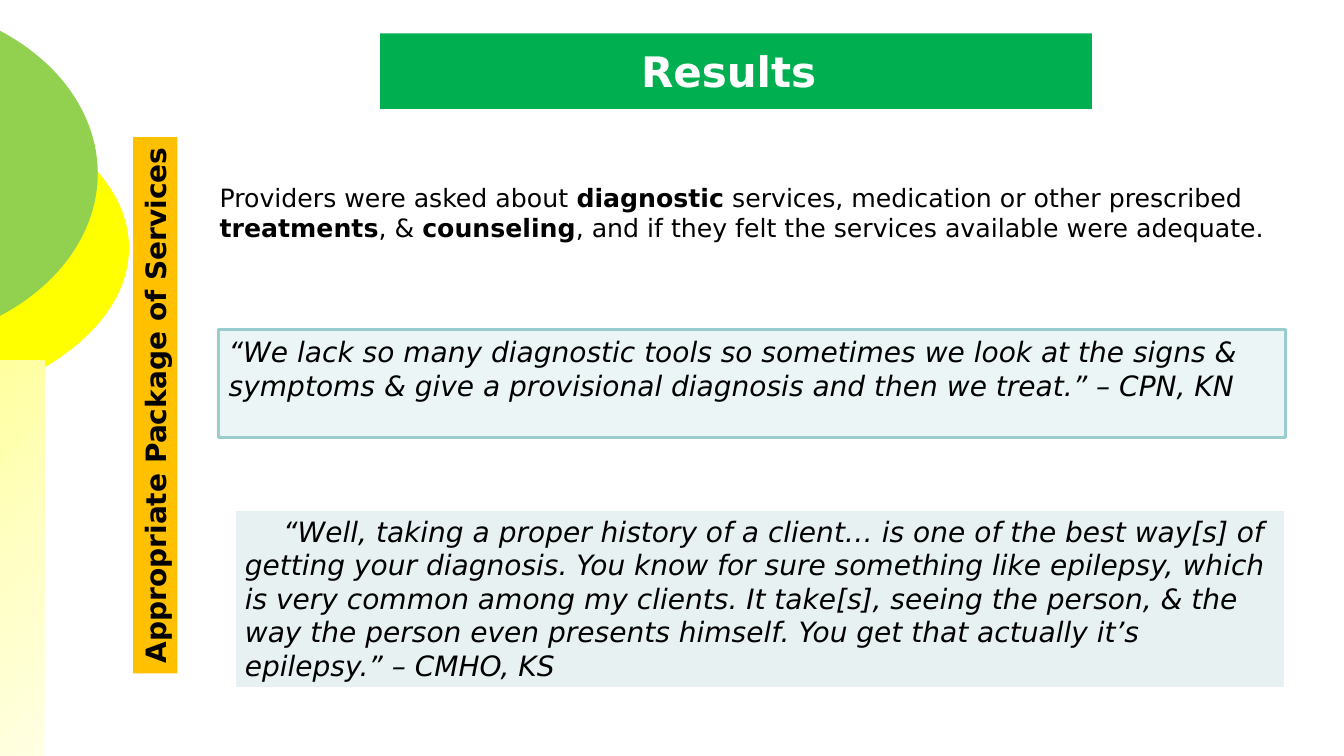
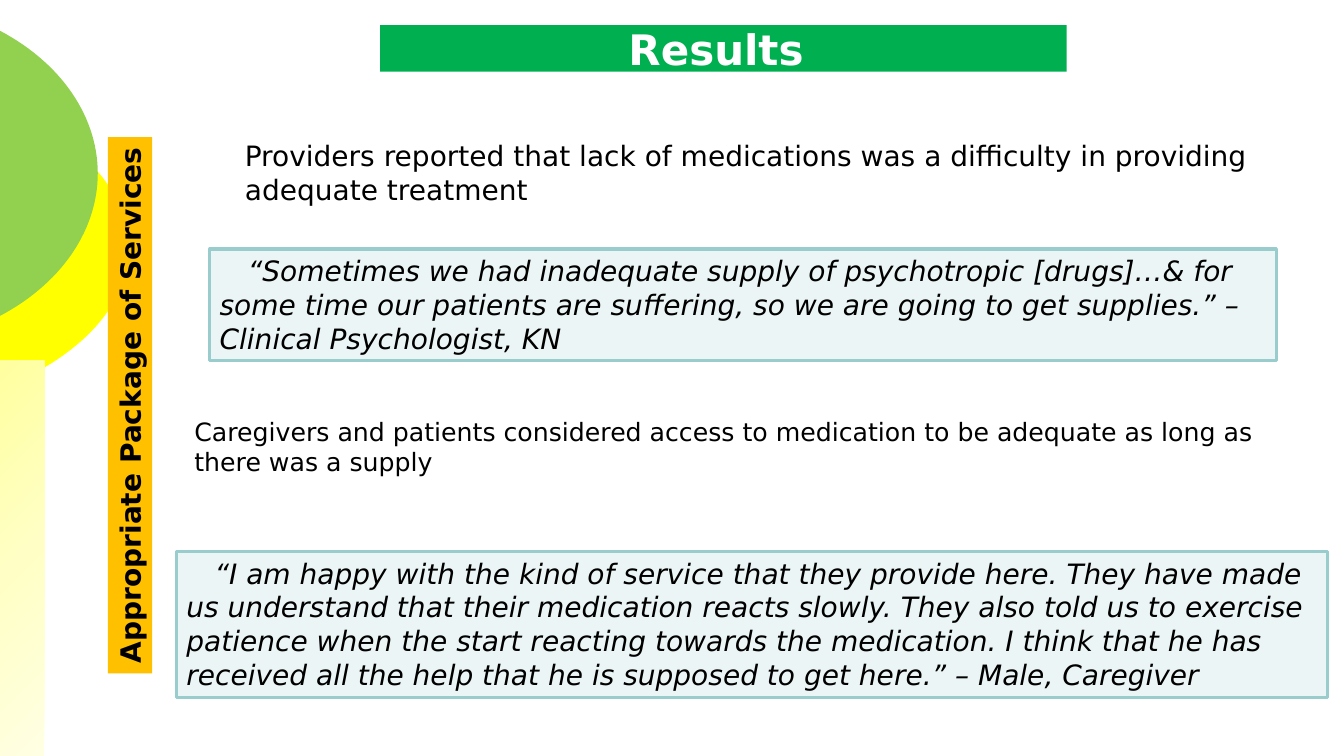
import math

import pptx
import pptx.dml.color
import pptx.enum.shapes
import pptx.enum.text
import pptx.oxml
import pptx.oxml.ns
import pptx.util
from pptx.util import Inches

KIND = pptx.enum.shapes.MSO_SHAPE
ALIGN = pptx.enum.text.PP_ALIGN
ANCHOR = pptx.enum.text.MSO_ANCHOR
FIT = pptx.enum.text.MSO_AUTO_SIZE
FADE = (("0", "FFFFA0"), ("50000", "FFFFC5"), ("100000", "FFFFE3"))


def color(code):
    """Turn a hex string into a colour."""
    return pptx.dml.color.RGBColor.from_string(code)


class Deck:
    """Holds the shared style and the current slide."""

    font = "DejaVu Sans"
    ink = "000000"
    pale = "EBF5F5"
    edge = "99CCCC"

    def __init__(self):
        """Open an empty wide deck."""
        self.show = pptx.Presentation()
        self.show.slide_width = Inches(13.33)
        self.show.slide_height = Inches(7.5)
        self.slide = None

    def start(self, top, wide, high, bar):
        """Add a slide with its decoration, title and side bar."""
        self.slide = self.show.slides.add_slide(self.show.slide_layouts[5])
        self.arc(-1.72, 2.46, 3, 1.71, "FFFF00")
        self.arc(-1.28, 1.72, 2.25, 1.72, "92D050")
        self.strip()
        self.title("Results ", top, wide, high)
        self.side("Appropriate Package of Services", bar)

    def arc(self, mid, row, wide, high, fill):
        """Draw the part of an ellipse right of the slide's left edge."""
        end = math.acos(-mid / wide)
        steps = 60
        turns = [end * (2 * k / steps - 1) for k in range(steps + 1)]
        dots = [(Inches(mid + wide * math.cos(t)),
                 Inches(row + high * math.sin(t))) for t in turns]
        pen = self.slide.shapes.build_freeform(*dots[0], scale=1.0)
        pen.add_line_segments(dots[1:], close=True)
        self.paint(pen.convert_to_shape(), fill)

    def paint(self, shape, fill, line=None):
        """Give a shape a flat fill and an optional outline."""
        shape.shadow.inherit = False
        shape.fill.solid()
        shape.fill.fore_color.rgb = color(fill)
        if line:
            shape.line.color.rgb = color(line)
            shape.line.width = pptx.util.Pt(2.25)
        else:
            shape.line.fill.background()

    def rect(self, left, top, wide, high, fill, line=None):
        """Draw a filled rectangle."""
        shape = self.slide.shapes.add_shape(
            KIND.RECTANGLE, Inches(left), Inches(top), Inches(wide), Inches(high))
        self.paint(shape, fill, line)
        return shape

    def strip(self):
        """Draw the fading strip in the lower left corner."""
        shape = self.rect(0, 3.58, 0.44, 3.92, FADE[0][1])
        stops = "".join(f'<a:gs pos="{pos}"><a:srgbClr val="{code}"/></a:gs>'
                        for pos, code in FADE)
        fade = pptx.oxml.parse_xml(
            f'<a:gradFill {pptx.oxml.ns.nsdecls("a")} rotWithShape="1">'
            f'<a:gsLst>{stops}</a:gsLst><a:path path="circle">'
            '<a:fillToRect r="100000" b="100000"/></a:path></a:gradFill>')
        props = shape.element.spPr
        props.replace(props.find(pptx.oxml.ns.qn("a:solidFill")), fade)

    def label(self, shape, parts, size, ink=ink, bold=False, slant=False):
        """Fill a shape with one paragraph; every second part is bold."""
        frame = shape.text_frame
        frame.word_wrap = True
        frame.auto_size = FIT.NONE
        frame.vertical_anchor = ANCHOR.TOP
        para = frame.paragraphs[0]
        para.alignment = ALIGN.LEFT
        for k, part in enumerate(parts):
            run = para.add_run()
            run.text = part
            run.font.name = self.font
            run.font.size = pptx.util.Pt(size)
            run.font.color.rgb = color(ink)
            run.font.bold = bold or k % 2 == 1
            run.font.italic = slant
        return para

    def title(self, text, top, wide, high):
        """Place and format the title."""
        shape = self.slide.shapes.title
        shape.left, shape.top = Inches(3.77), Inches(top)
        shape.width, shape.height = Inches(wide), Inches(high)
        shape.fill.solid()
        shape.fill.fore_color.rgb = color("00B050")
        self.label(shape, [text], 30, "FFFFFF", True).alignment = ALIGN.CENTER
        frame = shape.text_frame
        frame.vertical_anchor = ANCHOR.MIDDLE
        frame.margin_left = frame.margin_right = Inches(0.07)
        frame.margin_top = frame.margin_bottom = Inches(0.04)

    def side(self, text, mid):
        """Draw the upright label bar centred at a given distance."""
        wide, high = 5.32, 0.44
        shape = self.rect(mid - wide / 2, 3.8, wide, high, "FFC000")
        shape.rotation = 270
        self.label(shape, [text], 20, bold=True)
        shape.text_frame.word_wrap = False

    def note(self, left, top, wide, high, size, *parts):
        """Add plain text."""
        shape = self.slide.shapes.add_textbox(
            Inches(left), Inches(top), Inches(wide), Inches(high))
        self.label(shape, parts, size)

    def quote(self, left, top, wide, high, text, dent=0, fill=pale, line=edge):
        """Draw a framed quotation."""
        shape = self.rect(left, top, wide, high, fill, line)
        para = self.label(shape, [text], 20, slant=True)
        if dent:
            para._p.get_or_add_pPr().set("indent", str(Inches(dent)))


def main():
    """Build both slides."""
    deck = Deck()
    deck.start(0.33, 7.06, 0.75, 1.54)
    deck.quote(2.17, 3.27, 10.58, 1.07,
               "“We lack so many diagnostic tools so sometimes we look at the signs & "
               "symptoms & give a provisional diagnosis and then we treat.” – CPN, KN")
    deck.note(2.08, 1.76, 11.08, 0.71, 18,
              "Providers were asked about ", "diagnostic",
              " services, medication or other prescribed ", "treatments",
              ", & ", "counseling",
              ", and if they felt the services available were adequate.")
    deck.quote(2.33, 5.05, 10.42, 1.78,
               "“Well, taking a proper history of a client… is one of the best way[s] "
               "of getting your diagnosis. You know for sure something like epilepsy, "
               "which is very common among my clients. It take[s], seeing the person, "
               "& the way the person even presents himself. You get that actually "
               "it’s epilepsy.” – CMHO, KS", 0.38, "E8F1F1", "FFFFFF")

    deck.start(0.25, 6.81, 0.46, 1.29)
    deck.note(2.33, 1.33, 10.25, 0.77, 20,
              "Providers reported that lack of medications was a difficulty in "
              "providing adequate treatment")
    deck.quote(2.08, 2.47, 10.58, 1.11,
               "“Sometimes we had inadequate supply of psychotropic [drugs]…& for "
               "some time our patients are suffering, so we are going to get "
               "supplies.” – Clinical Psychologist, KN", 0.28)
    deck.note(1.83, 4.08, 11, 0.71, 18,
              "Caregivers and patients considered access to medication to be "
              "adequate as long as there was a supply")
    deck.quote(1.75, 5.47, 11.42, 1.45,
               "“I am happy with the kind of service that they provide here. They "
               "have made us understand that their medication reacts slowly. They "
               "also told us to exercise patience when the start reacting towards "
               "the medication. I think that he has received all the help that he "
               "is supposed to get here.” – Male, Caregiver", 0.28)
    deck.show.save("out.pptx")


if __name__ == "__main__":
    main()
